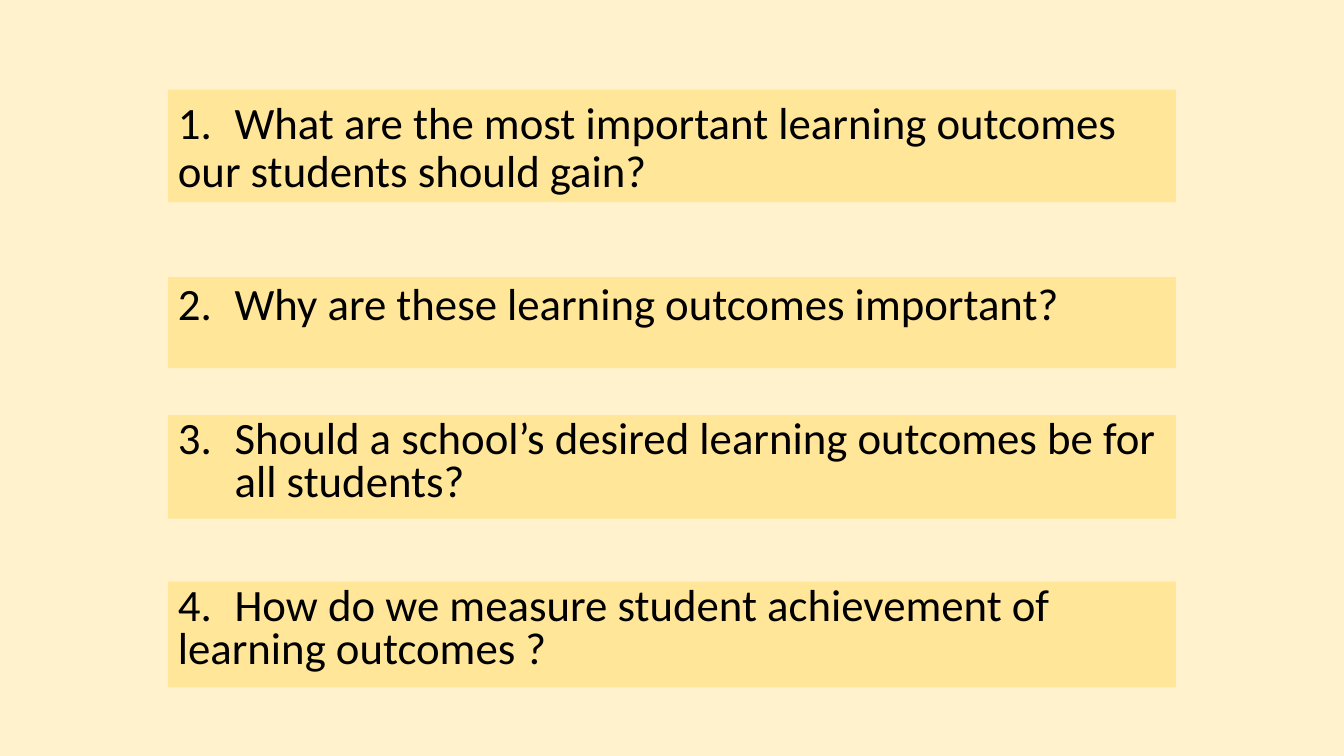
from lxml import etree
from pptx import Presentation
from pptx import util as u
from pptx.dml.color import RGBColor
from pptx.enum import shapes, text
from pptx.oxml.ns import qn

Pt = u.Pt
HUES = {"back": "FFF2CC", "bar": "FFE699", "ink": "000000"}
FACE = {"name": "Calibri", "size": Pt(32)}
TAB = Pt(40.5)
LEFT, WIDTH = 120, 720
TOP, BASE = text.MSO_ANCHOR.TOP, text.MSO_ANCHOR.BOTTOM

ITEMS = [
    (64, 80.5, "What are the most important learning outcomes our students should gain?",
     {"anchor": BASE, "line": 0.9, "before": 0, "hang": False}),
    (198, 65, "Why are these learning outcomes important?",
     {"anchor": TOP, "line": 0.9, "before": 10, "hang": False}),
    (296.5, 74, "Should a school’s desired learning outcomes be for all students?",
     {"anchor": TOP, "line": 0.8, "before": 10, "hang": True}),
    (415.5, 75.5, "How do we measure student achievement of learning outcomes ?",
     {"anchor": TOP, "line": 0.8, "before": 10, "hang": False}),
]


def hue(key):
    return RGBColor.from_string(HUES[key])


def apply(item, look):
    for key, value in look.items():
        setattr(item, key, value)


def indent(para, hang):
    props = para._p.get_or_add_pPr()
    if hang:
        props.set("marL", str(TAB))
        props.set("indent", str(-TAB))
    tabs = etree.SubElement(props, qn("a:tabLst"))
    etree.SubElement(tabs, qn("a:tab"), pos=str(TAB), algn="l")


def question(slide, box, words, look):
    bar = slide.shapes.add_shape(shapes.MSO_SHAPE.RECTANGLE, *map(Pt, box))
    bar.shadow.inherit = False
    bar.fill.solid()
    bar.fill.fore_color.rgb = hue("bar")
    bar.line.fill.background()
    frame = bar.text_frame
    apply(frame, {"word_wrap": True, "vertical_anchor": look["anchor"]})
    para = frame.paragraphs[0]
    apply(para, {"alignment": text.PP_ALIGN.LEFT, "line_spacing": look["line"],
                 "space_before": Pt(look["before"])})
    indent(para, look["hang"])
    run = para.add_run()
    run.text = words
    apply(run.font, FACE)
    run.font.color.rgb = hue("ink")


def main():
    deck = Presentation()
    apply(deck, {"slide_width": Pt(960), "slide_height": Pt(540)})
    slide = deck.slides.add_slide(deck.slide_layouts[6])
    slide.background.fill.solid()
    slide.background.fill.fore_color.rgb = hue("back")
    for count, (top, height, words, look) in enumerate(ITEMS, 1):
        question(slide, (LEFT, top, WIDTH, height), f"{count}.\t{words}", look)
    deck.save("out.pptx")


if __name__ == "__main__":
    main()
